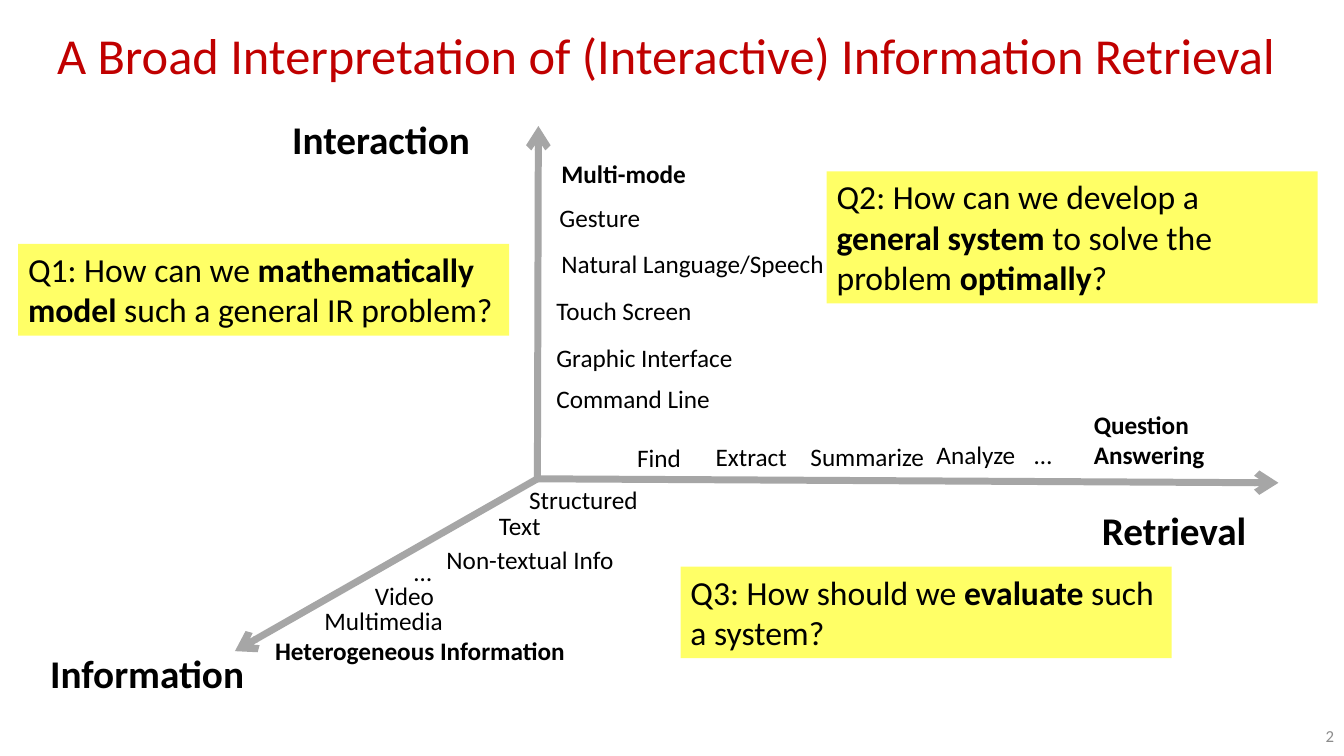
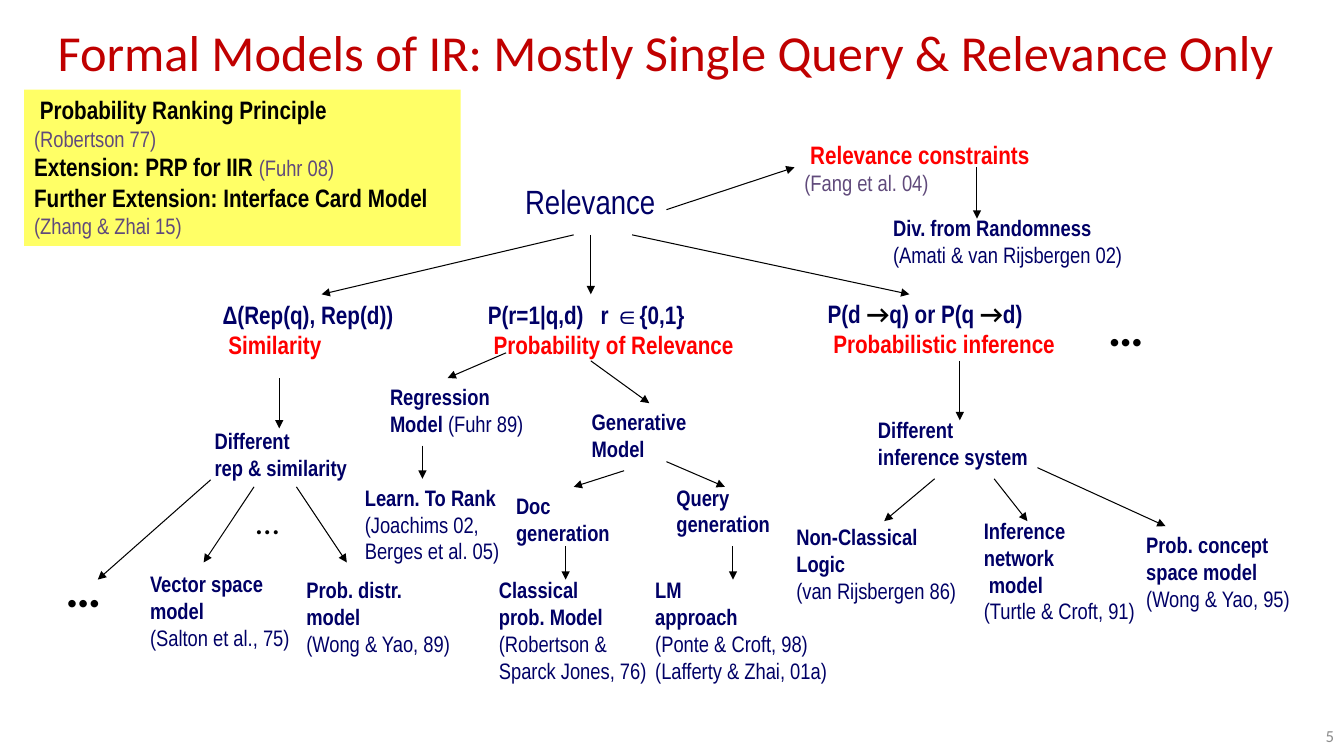
from collections import namedtuple
from dataclasses import dataclass

from lxml import etree
from pptx import Presentation
from pptx.dml.color import RGBColor
from pptx.enum import shapes, text
from pptx.oxml import ns
from pptx.util import Inches, Pt

Style = namedtuple("Style", "size font colour bold", defaults=[False])


@dataclass(frozen=True)
class Theme:
    yellow: str = "FFFF66"
    grey: str = "A6A6A6"
    black: str = "000000"
    title: Style = Style(36, "Calibri", "C00000")
    number: Style = Style(12, "Calibri", "8C8C8C")
    axis: Style = Style(28, "Calibri", "000000", True)
    topic: Style = Style(18, "Calibri", "000000")
    topic_bold: Style = Style(18, "Calibri", "000000", True)
    question: Style = Style(24, "Calibri", "000000")
    question_bold: Style = Style(24, "Calibri", "000000", True)
    dots: Style = Style(36, "Calibri", "000000", True)
    root: Style = Style(24, "Arial Narrow", "000066")
    formula: Style = Style(18, "Arial Narrow", "000066", True)
    family: Style = Style(18, "Arial Narrow", "FF0000", True)
    model: Style = Style(16, "Arial Narrow", "000066", True)
    reference: Style = Style(16, "Arial Narrow", "000066")
    principle: Style = Style(18, "Arial Narrow", "000000", True)
    citation: Style = Style(16, "Arial Narrow", "604A7B")


theme = Theme()


def add_text(slide, at, paragraphs, wrap=False, fill=None):
    place = [Inches(value) for value in at]
    if fill:
        shape = slide.shapes.add_shape(shapes.MSO_SHAPE.RECTANGLE, *place)
        shape.shadow.inherit = False
        shape.fill.solid()
        shape.fill.fore_color.rgb = RGBColor.from_string(fill)
        shape.line.fill.background()
    else:
        shape = slide.shapes.add_textbox(*place)
    frame = shape.text_frame
    frame.word_wrap = wrap
    frame.auto_size = text.MSO_AUTO_SIZE.SHAPE_TO_FIT_TEXT
    frame.vertical_anchor = text.MSO_ANCHOR.TOP
    for index, runs in enumerate(paragraphs):
        paragraph = frame.add_paragraph() if index else frame.paragraphs[0]
        paragraph.alignment = text.PP_ALIGN.LEFT
        for words, style in runs:
            run = paragraph.add_run()
            run.text = words
            run.font.size = Pt(style.size)
            run.font.name = style.font
            run.font.bold = style.bold
            run.font.color.rgb = RGBColor.from_string(style.colour)
    return shape


def add_arrow(slide, start, end, colour, width, head):
    ends = [Inches(value) for value in start + end]
    arrow = slide.shapes.add_connector(shapes.MSO_CONNECTOR.STRAIGHT, *ends)
    arrow.line.color.rgb = RGBColor.from_string(colour)
    arrow.line.width = Pt(width)
    line = arrow.line._get_or_add_ln()
    etree.SubElement(line, ns.qn("a:tailEnd"), type=head)
    etree.SubElement(arrow._element.spPr, ns.qn("a:effectLst"))


presentation = Presentation()
presentation.slide_width = Inches(13.33)
presentation.slide_height = Inches(7.5)

slides = []
for title, left, top, number in [
    ("A Broad Interpretation of (Interactive) Information Retrieval ", 0, 0, "2"),
    ("Formal Models of IR: Mostly Single Query & Relevance Only", -0.06, -0.03, "5"),
]:
    slide = presentation.slides.add_slide(presentation.slide_layouts[5])
    heading = slide.shapes.title
    heading.left, heading.top = Inches(left), Inches(top)
    heading.width, heading.height = Inches(13.33), Inches(1.08)
    heading.text_frame.vertical_anchor = text.MSO_ANCHOR.MIDDLE
    paragraph = heading.text_frame.paragraphs[0]
    paragraph.alignment = text.PP_ALIGN.CENTER
    run = paragraph.add_run()
    run.text = title
    run.font.size = Pt(theme.title.size)
    run.font.name = theme.title.font
    run.font.color.rgb = RGBColor.from_string(theme.title.colour)

    footer = add_text(slide, (10.22, 7.1, 3.11, 0.4), [[(number, theme.number)]], wrap=True)
    footer.text_frame.auto_size = text.MSO_AUTO_SIZE.NONE
    footer.text_frame.vertical_anchor = text.MSO_ANCHOR.MIDDLE
    footer.text_frame.paragraphs[0].alignment = text.PP_ALIGN.RIGHT
    slides.append(slide)

axes_slide, models_slide = slides

for name, tip, left, top, width in [
    ("Retrieval", (12.68, 4.79), 10.83, 4.97, 1.85),
    ("Information", (2.33, 6.46), 0.4, 6.39, 2.4),
    ("Interaction", (5.34, 1.25), 2.8, 1.09, 2.25),
]:
    add_arrow(axes_slide, (5.33, 4.75), tip, theme.grey, 5, "arrow")
    add_text(axes_slide, (left, top, width, 0.57), [[(name, theme.axis)]])

for name, left, top, width in [
    ("Gesture", 5.45, 1.96, 1.38),
    ("Natural Language/Speech", 5.47, 2.41, 2.87),
    ("Touch Screen", 5.42, 2.88, 1.58),
    ("Graphic Interface", 5.42, 3.35, 2.07),
    ("Command Line", 5.42, 3.75, 1.92),
    ("Find", 6.22, 4.34, 0.88),
    ("Extract", 7, 4.33, 1.2),
    ("Summarize", 7.94, 4.33, 1.33),
    ("Analyze", 9.19, 4.31, 1.17),
    ("…", 10.16, 4.31, 1.33),
    ("Structured", 5.15, 4.76, 1.75),
    ("Text", 4.85, 5.01, 0.99),
    ("Non-textual Info", 4.33, 5.35, 1.99),
    ("…", 4.01, 5.47, 1.04),
    ("Video", 3.62, 5.71, 1.04),
    ("Multimedia", 3.12, 5.96, 1.46),
]:
    add_text(axes_slide, (left, top, width, 0.4), [[(name, theme.topic)]], wrap=True)

for lines, left, top, width in [
    (["Multi-mode"], 5.47, 1.52, 1.87),
    (["Question", "Answering"], 10.75, 4.01, 1.63),
    (["Heterogeneous Information"], 2.63, 6.25, 3.57),
]:
    paragraphs = [[(line, theme.topic_bold)] for line in lines]
    add_text(axes_slide, (left, top, width, 0.1 + 0.3 * len(lines)), paragraphs, wrap=True)

plain, strong = theme.question, theme.question_bold
for left, top, height, runs in [
    (0.18, 2.42, 0.91, [
        ("Q1: How can we ", plain),
        ("mathematically model", strong),
        (" such a general IR problem?", plain),
    ]),
    (8.2, 1.7, 1.31, [
        ("Q2: How can we develop a ", plain),
        ("general system", strong),
        (" to solve the problem ", plain),
        ("optimally", strong),
        ("?", plain),
    ]),
    (6.75, 5.62, 0.91, [
        ("Q3: How should we ", plain),
        ("evaluate", strong),
        (" such a system?", plain),
    ]),
]:
    add_text(axes_slide, (left, top, 4.87, height), [runs], wrap=True, fill=theme.yellow)

add_text(models_slide, (0.24, 0.89, 4.33, 1.55), [
    [(" Probability Ranking Principle", theme.principle)],
    [("(Robertson 77)", theme.citation)],
    [("Extension: PRP for IIR ", theme.principle), ("(Fuhr 08)", theme.citation)],
    [("Further Extension: Interface Card Model", theme.principle)],
    [("(Zhang & Zhai 15)", theme.citation)],
], wrap=True, fill=theme.yellow)

add_text(models_slide, (5.11, 1.75, 1.5, 0.5), [[("Relevance", theme.root)]])
add_text(models_slide, (7.88, 1.33, 2.46, 0.67), [
    [(" ", theme.formula), ("Relevance constraints", theme.family)],
    [("(Fang et al. 04)", theme.citation)],
])

implies = ("→", theme.topic_bold)
for left, top, width, formula, family in [
    (2.11, 2.92, 2.13, [("Δ(Rep(q), Rep(d))", theme.formula)], "Similarity"),
    (4.74, 2.92, 2.64, [("P(r=1|q,d)\tr ∈{0,1}", theme.formula)], "Probability of Relevance"),
    (8.11, 2.91, 2.46, [
        ("P(d ", theme.formula), implies, ("q) or P(q ", theme.formula), implies,
        ("d)", theme.formula),
    ], "Probabilistic inference"),
]:
    label = add_text(models_slide, (left, top, width, 0.7), [
        formula, [(" ", theme.formula), (family, theme.family)],
    ])
    if "\t" in formula[0][0]:
        properties = label.text_frame.paragraphs[0]._p.get_or_add_pPr()
        tabs = etree.SubElement(properties, ns.qn("a:tabLst"))
        etree.SubElement(tabs, ns.qn("a:tab"), pos=str(Inches(1.12)), algn="l")

add_text(models_slide, (3.77, 3.75, 1.54, 0.64), [
    [("Regression", theme.model)],
    [("Model ", theme.model), ("(Fuhr 89)", theme.reference)],
])

for left, top, width, names, references in [
    (2.03, 4.19, 1.56, ["Different", "rep & similarity"], []),
    (1.39, 5.61, 1.64, ["Vector space", "model"], ["(Salton et al., 75)"]),
    (2.94, 5.67, 1.64, ["Prob. distr.", "model"], ["(Wong & Yao, 89)"]),
    (3.52, 4.75, 1.55, ["Learn. To Rank"], ["(Joachims 02,", "Berges et al. 05)"]),
    (5.77, 4, 1.14, ["Generative", "Model"], []),
    (5.02, 4.83, 1.13, ["Doc", "generation"], []),
    (6.61, 4.75, 1.13, ["Query", "generation"], []),
    (4.85, 5.67, 1.67, ["Classical", "prob. Model"], ["(Robertson &", "Sparck Jones, 76)"]),
    (6.4, 5.67, 1.91, ["LM", "approach"], ["(Ponte & Croft, 98)", "(Lafferty & Zhai, 01a)"]),
    (8.61, 4.08, 1.74, ["Different", "inference system"], []),
    (7.8, 5.14, 1.8, ["Non-Classical", "Logic"], ["(van Rijsbergen 86)"]),
    (9.66, 5.08, 1.7, ["Inference", "network", " model"], ["(Turtle & Croft, 91)"]),
    (11.27, 5.22, 1.64, ["Prob. concept", "space model"], ["(Wong & Yao, 95)"]),
    (8.76, 2.08, 2.55, ["Div. from Randomness"], ["(Amati & van Rijsbergen 02)"]),
]:
    paragraphs = [[(name, theme.model)] for name in names]
    paragraphs += [[(reference, theme.reference)] for reference in references]
    add_text(models_slide, (left, top, width, 0.1 + 0.27 * len(paragraphs)), paragraphs)

for left, top, width, height, style in [
    (2.44, 4.92, 0.53, 0.5, theme.question),
    (10.89, 2.89, 0.56, 0.71, theme.dots),
    (0.55, 5.48, 0.56, 0.71, theme.dots),
]:
    add_text(models_slide, (left, top, width, height), [[("…", style)]])

for start, end in [
    ((5.69, 2.33), (3.19, 2.92)),
    ((5.86, 2.33), (5.86, 2.92)),
    ((6.27, 2.33), (9.02, 2.92)),
    ((6.61, 2.08), (7.88, 1.66)),
    ((9.69, 1.66), (9.69, 2.17)),
    ((2.77, 3.75), (2.77, 4.25)),
    ((2.09, 4.76), (0.97, 5.75)),
    ((2.52, 4.83), (2.02, 5.58)),
    ((2.94, 4.83), (3.44, 5.58)),
    ((5.02, 3.5), (4.44, 3.75)),
    ((5.86, 3.58), (6.44, 4)),
    ((4.19, 4.42), (4.19, 4.75)),
    ((6.19, 4.67), (5.69, 4.83)),
    ((6.61, 4.58), (7.19, 4.83)),
    ((5.61, 5.42), (5.61, 5.75)),
    ((7.27, 5.42), (7.27, 5.75)),
    ((9.52, 3.58), (9.52, 4.17)),
    ((9.27, 4.75), (8.77, 5.17)),
    ((9.86, 4.75), (10.19, 5.17)),
    ((10.29, 4.64), (11.56, 5.22)),
]:
    add_arrow(models_slide, start, end, theme.black, 0.75, "triangle")

presentation.save("out.pptx")
